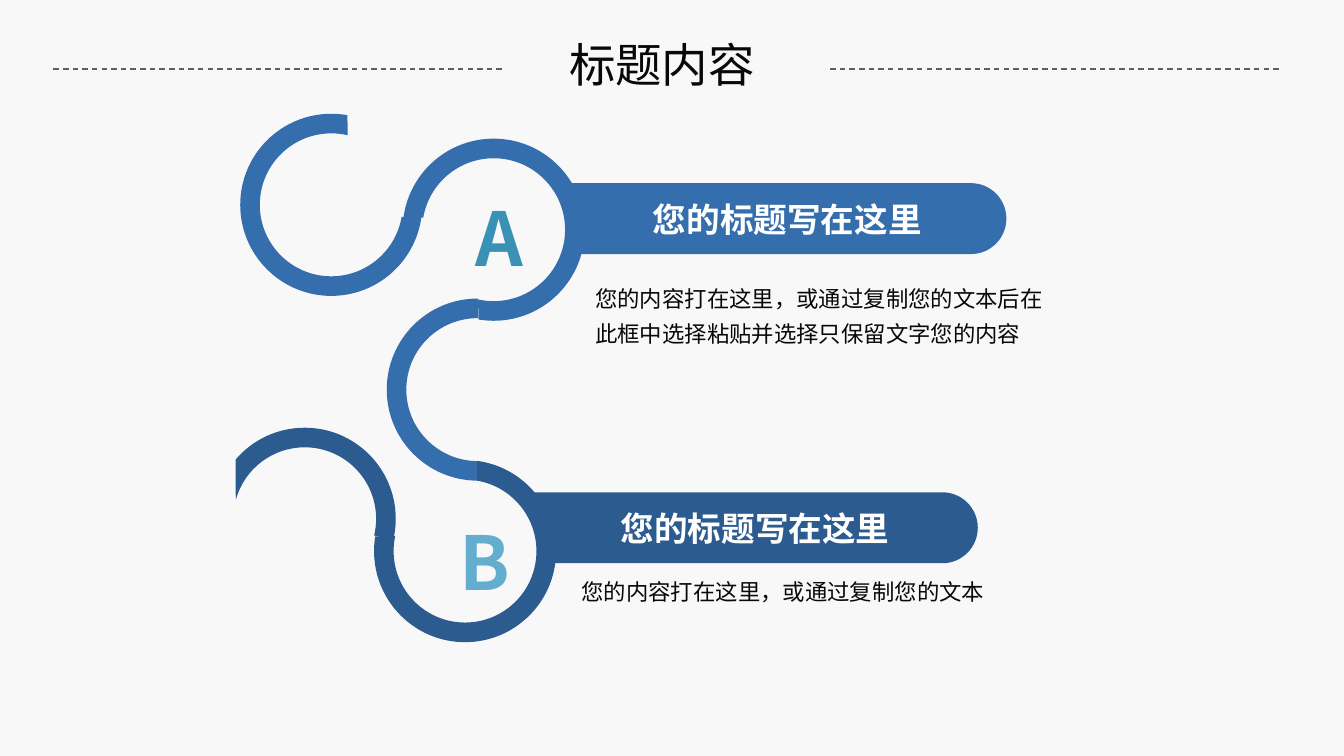
from math import ceil, cos, floor, radians, sin, tan

from lxml import etree
from pptx import Presentation
from pptx.dml.color import RGBColor
from pptx.enum.dml import MSO_LINE
from pptx.enum.shapes import MSO_CONNECTOR
from pptx.enum.text import MSO_ANCHOR, MSO_AUTO_SIZE, PP_ALIGN
from pptx.oxml.ns import qn
from pptx.util import Cm, Pt

STRAIGHT = MSO_CONNECTOR.STRAIGHT
DASH = MSO_LINE.DASH
MIDDLE, TOP = MSO_ANCHOR.MIDDLE, MSO_ANCHOR.TOP
LEFT, CENTER = PP_ALIGN.LEFT, PP_ALIGN.CENTER
NO_AUTOFIT = MSO_AUTO_SIZE.NONE
FONT = "Noto Sans CJK SC"
BLUE, NAVY, INK, WHITE = "356EAD", "2C5B8F", "080808", "FFFFFF"
OUTER, INNER, CAP = 1.72, 1.35, 0.67
hex_color = RGBColor.from_string


def arc(x, y, radius, start, end):
    low, high = min(start, end), max(start, end)
    quarters = [90 * i for i in range(floor(low / 90) + 1, ceil(high / 90))]
    stops = sorted([low, *quarters, high], reverse=start > end)
    steps = [[(Cm(x + radius * cos(radians(start))), Cm(y + radius * sin(radians(start))))]]
    for first, last in zip(stops, stops[1:]):
        a, b = radians(first), radians(last)
        pull = 4 / 3 * tan((b - a) / 4)
        curve = [(cos(a) - pull * sin(a), sin(a) + pull * cos(a)),
                 (cos(b) + pull * sin(b), sin(b) - pull * cos(b)),
                 (cos(b), sin(b))]
        steps.append([(Cm(x + radius * u), Cm(y + radius * v)) for u, v in curve])
    return steps


def write(frame, text, size, color, bold=False, align=LEFT, anchor=TOP, spacing=None):
    frame.word_wrap = True
    frame.auto_size = NO_AUTOFIT
    frame.vertical_anchor = anchor
    para = frame.paragraphs[0]
    para.alignment = align
    para.line_spacing = spacing
    span = para.add_run()
    span.text = text
    span.font.size = Pt(size)
    span.font.bold = bold
    span.font.color.rgb = hex_color(color)
    span.font.name = FONT
    etree.SubElement(span.font._element, qn("a:ea"), typeface=FONT)


deck = Presentation()
deck.slide_width, deck.slide_height = Cm(25.4), Cm(14.28)
page = deck.slides.add_slide(deck.slide_layouts[5])
page.background.fill.solid()
page.background.fill.fore_color.rgb = hex_color("F8F8F8")

title = page.shapes.title
title.left, title.top, title.width, title.height = Cm(10.31), Cm(0.55), Cm(4.4), Cm(1.32)
frame = title.text_frame
frame.margin_left = frame.margin_right = frame.margin_top = frame.margin_bottom = 0
write(frame, "标题内容", 24.9, INK, align=CENTER, anchor=MIDDLE)

for left in (15.69, 1.01):
    rule = page.shapes.add_connector(STRAIGHT, Cm(left), Cm(1.3), Cm(left + 8.49), Cm(1.3))
    rule.line.color.rgb = hex_color("5F5F5F")
    rule.line.width = Pt(0.75)
    rule.line.dash_style = DASH
    etree.SubElement(rule._element.spPr, qn("a:effectLst"))

rings = [
    (9.33, 4.34, 187.6, 459.7, 189.7, 462.5, BLUE),
    (9.03, 7.36, 270, 90, 270, 90, BLUE),
    (8.79, 10.41, -82.4, 189.3, -80.3, 192, NAVY),
    (6.26, 3.87, -79.7, -352.4, -76.8, -350.3, BLUE),
    (5.76, 9.8, 220.5, 373.5, 195.2, 373.5, NAVY),
]
bars = [
    (10.06, 10.21, 17.81, 9.97, NAVY),
    (10.74, 10.74, 18.35, 4.13, BLUE),
]
outlines = []
for x, y, start, end, inner_start, inner_end, color in rings:
    steps = arc(x, y, OUTER, start, end) + arc(x, y, INNER, inner_end, inner_start)
    outlines.append((steps, color, ""))
for top_left, bottom_left, cap_x, y, color in bars:
    steps = [[(Cm(top_left), Cm(y - CAP))], *arc(cap_x, y, CAP, -90, 90)]
    steps.append([(Cm(bottom_left), Cm(y + CAP))])
    outlines.append((steps, color, "您的标题写在这里"))

for steps, color, heading in outlines:
    builder = page.shapes.build_freeform(*steps[0][0])
    builder.add_line_segments([point for step in steps[1:] for point in step], close=True)
    shape = builder.convert_to_shape()
    segments = iter(list(shape._element.iter(qn("a:lnTo"))))
    for step in steps[1:]:
        group = [next(segments) for _ in step]
        if len(group) == 3:
            curve = etree.Element(qn("a:cubicBezTo"))
            group[0].addprevious(curve)
            for segment in group:
                curve.append(segment[0])
                segment.getparent().remove(segment)
    shape.shadow.inherit = False
    shape.fill.solid()
    shape.fill.fore_color.rgb = hex_color(color)
    shape.line.fill.background()
    if heading:
        write(shape.text_frame, heading, 18, WHITE, True, CENTER, MIDDLE)

labels = [
    (8.74, 3.51, 1.27, 1.96, "A", 39.8, "3992B5", True, None),
    (8.43, 9.63, 1.27, 1.96, "B", 39.8, "63AECE", True, None),
    (11, 5.11, 9.27, 1.52, "您的内容打在这里，或通过复制您的文本后在此框中选择粘贴并选择只保留文字您的内容",
     12, INK, False, 1.3),
    (10.74, 10.64, 9.98, 0.86, "您的内容打在这里，或通过复制您的文本", 12, INK, False, 1.3),
]
for left, top, width, height, text, size, color, bold, spacing in labels:
    box = page.shapes.add_textbox(Cm(left), Cm(top), Cm(width), Cm(height))
    write(box.text_frame, text, size, color, bold, spacing=spacing)

deck.save("out.pptx")
